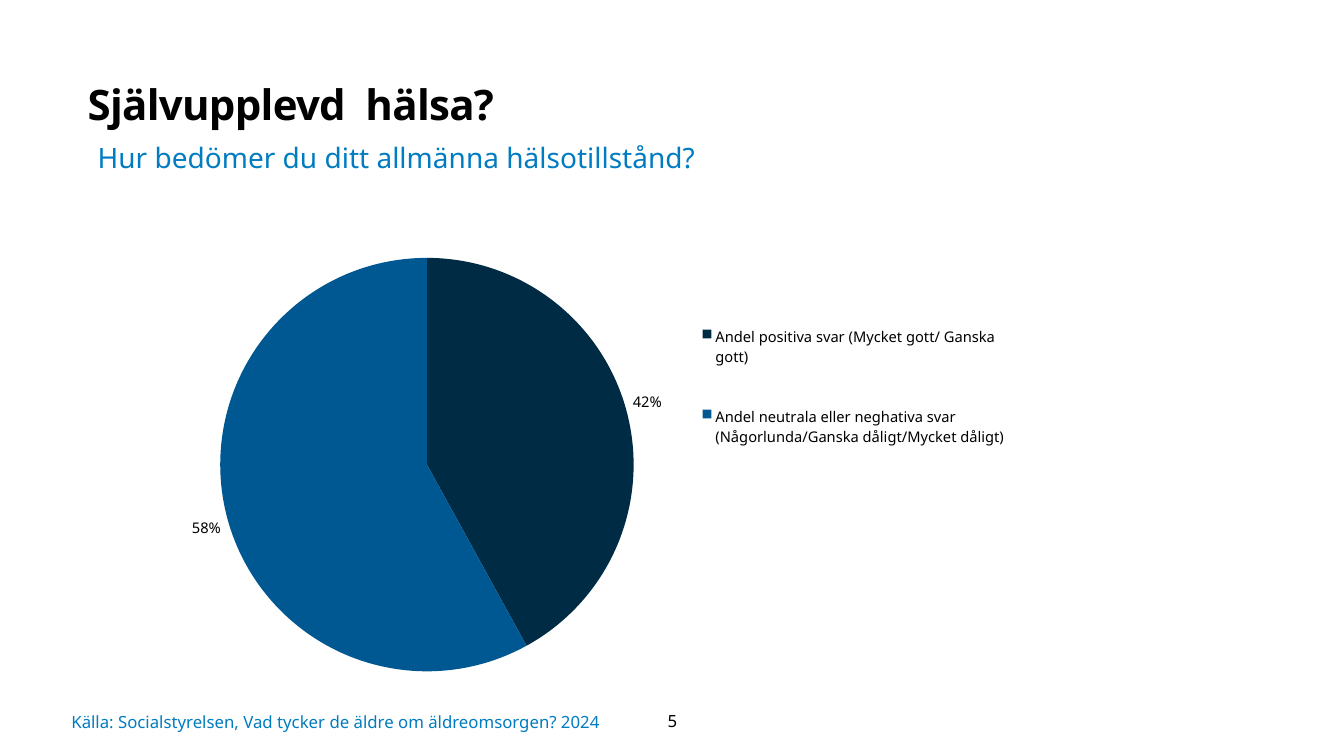
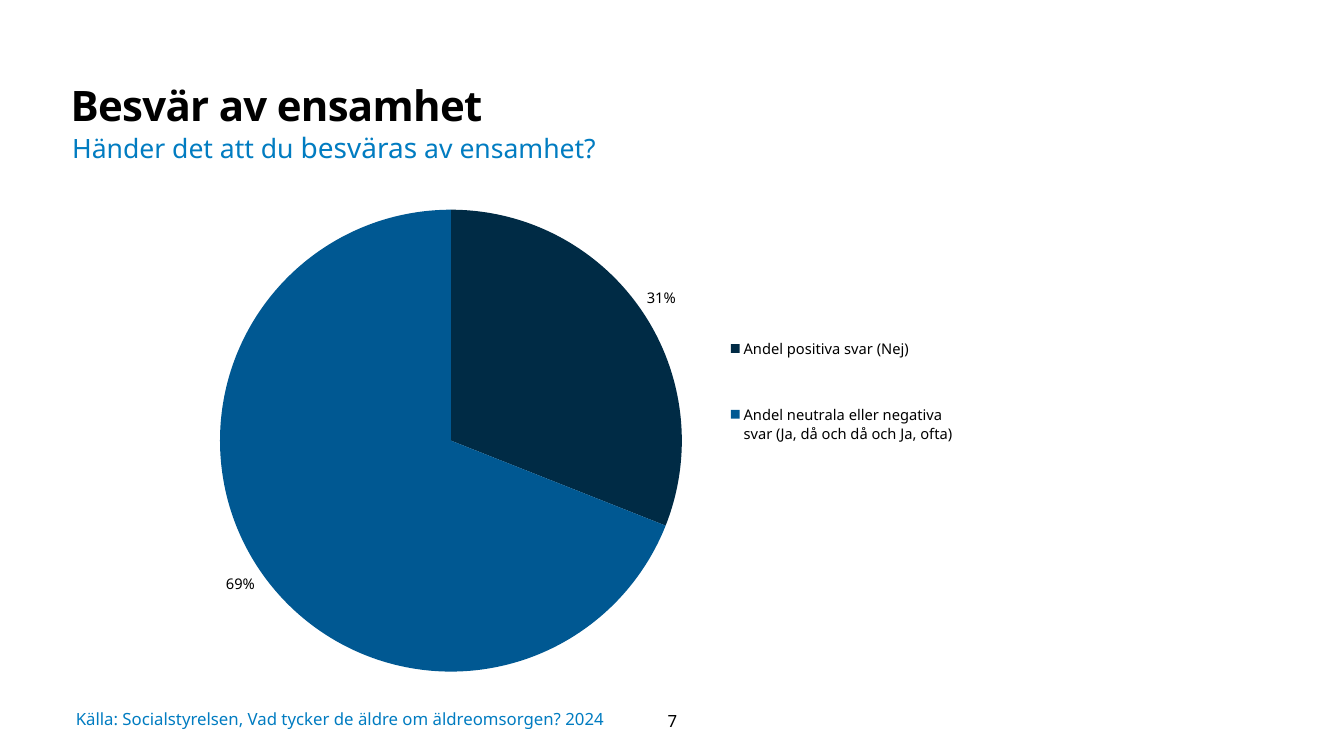
"""Build two survey slides, each with a pie chart of answers from older people."""
from lxml import etree
from pptx import Presentation
from pptx.chart.data import CategoryChartData
from pptx.dml.color import RGBColor
from pptx.enum.chart import XL_CHART_TYPE, XL_LABEL_POSITION, XL_LEGEND_POSITION
from pptx.enum.text import MSO_ANCHOR, PP_ALIGN
from pptx.oxml.ns import qn
from pptx.util import Cm, Pt

PIE = XL_CHART_TYPE.PIE
OUTSIDE = XL_LABEL_POSITION.OUTSIDE_END
RIGHT = XL_LEGEND_POSITION.RIGHT
TOP, MIDDLE = MSO_ANCHOR.TOP, MSO_ANCHOR.MIDDLE
LEFT, CENTER = PP_ALIGN.LEFT, PP_ALIGN.CENTER

FONT = "Noto Sans"
BLACK, ACCENT = "000000", "017CC1"
SLICE_COLORS = ["002B45", "005892"]
INSETS = (0.25, 0.13, 0.25, 0.13)
TITLE_INSETS = (0, 0, 0.25, 0.13)
NO_INSETS = (0, 0, 0, 0)
SOURCE = "Källa: Socialstyrelsen, Vad tycker de äldre om äldreomsorgen? 2024"

SLIDES = [
    {
        "title": ("Självupplevd  hälsa?", (2.21, 1.85, 24.97, 1.55)),
        "question": (["Hur bedömer du ditt allmänna hälsotillstånd?"], 20, (2.21, 3.4, 20.02, 1.12)),
        "answers": {
            "Andel positiva svar (Mycket gott/ Ganska gott)": 42,
            "Andel neutrala eller neghativa svar (Någorlunda/Ganska dåligt/Mycket dåligt)": 58,
        },
        "chart": (4.22, 5.38, 22.17, 12.29),
        "plot": (0.06, 0.09, 0.47, 0.85),
        "legend": (0.6, 0.15, 0.36, 0.41),
        "source": (1.8, 17.65, 13.84, 1.07),
        "number": "5",
    },
    {
        "title": ("Besvär av ensamhet", (1.78, 1.88, 27, 1.24)),
        "question": (["Händer det att du ", "besväras", " av ensamhet?"], 19, (1.57, 3.15, 25.78, 1.12)),
        "answers": {
            "Andel positiva svar (Nej)": 31,
            "Andel neutrala eller negativa svar (Ja, då och då och Ja, ofta)": 69,
        },
        "chart": (3.23, 4.5, 21.41, 13.08),
        "plot": (0.09, 0.06, 0.58, 0.89),
        "legend": (0.7, 0.22, 0.28, 0.38),
        "source": (1.91, 17.75, 15.01, 0.74),
        "number": "7",
    },
]


def add_text(slide, box, runs, size, color, insets=INSETS, anchor=TOP, align=LEFT):
    """Add a one-paragraph text box and return the paragraph."""
    frame = slide.shapes.add_textbox(*map(Cm, box)).text_frame
    frame.word_wrap = True
    frame.vertical_anchor = anchor
    frame.margin_left, frame.margin_top, frame.margin_right, frame.margin_bottom = map(Cm, insets)
    paragraph = frame.paragraphs[0]
    paragraph.alignment = align
    for text in runs:
        paragraph.add_run().text = text
    paragraph.font.name = FONT
    paragraph.font.size = Pt(size)
    paragraph.font.color.rgb = RGBColor.from_string(color)
    return paragraph


def set_layout(parent, index, fractions, inner=False):
    """Place a chart part by fractions of the chart area."""
    for old in parent.findall(qn("c:layout")):
        parent.remove(old)
    layout = etree.Element(qn("c:layout"))
    manual = etree.SubElement(layout, qn("c:manualLayout"))
    settings = [("layoutTarget", "inner")] if inner else []
    settings += [("xMode", "edge"), ("yMode", "edge"), *zip("xywh", fractions)]
    for tag, value in settings:
        etree.SubElement(manual, qn(f"c:{tag}")).set("val", str(value))
    parent.insert(index, layout)


deck = Presentation()
deck.slide_width, deck.slide_height = Cm(33.87), Cm(19.05)

for content in SLIDES:
    slide = deck.slides.add_slide(deck.slide_layouts[6])

    title_text, title_box = content["title"]
    title = add_text(slide, title_box, [title_text], 30, BLACK, TITLE_INSETS)
    title.font.bold = True
    title.line_spacing = 1.1
    title.runs[0].font._element.set("spc", "-50")

    question_runs, question_size, question_box = content["question"]
    question = add_text(slide, question_box, question_runs, question_size, ACCENT)
    for emphasis in question.runs[1:2]:
        emphasis.font.size = Pt(20)

    answers = CategoryChartData()
    answers.categories = list(content["answers"])
    answers.add_series("Series 1", list(content["answers"].values()))
    chart = slide.shapes.add_chart(PIE, *map(Cm, content["chart"]), answers).chart
    chart.has_title = False
    chart.font.name = FONT
    chart.font.size = Pt(10)
    chart.font.color.rgb = RGBColor.from_string(BLACK)

    chart.has_legend = True
    legend = chart.legend
    legend.position = RIGHT
    legend.include_in_layout = False
    legend.font.name = FONT
    legend.font.size = Pt(10.5)
    set_layout(legend._element, 1, content["legend"])
    set_layout(chart._chartSpace.chart.plotArea, 0, content["plot"], inner=True)

    pie = chart.plots[0]
    pie.vary_by_categories = True
    for index, color in enumerate(SLICE_COLORS):
        slice_format = pie.series[0].points[index].format
        slice_format.fill.solid()
        slice_format.fill.fore_color.rgb = RGBColor.from_string(color)
        slice_format.line.fill.background()

    labels = pie.series[0].data_labels
    labels.show_value = False
    labels.show_percentage = True
    labels.number_format = "0%"
    labels.number_format_is_linked = False
    labels.position = OUTSIDE
    labels.font.name = FONT
    labels.font.size = Pt(10.5)

    add_text(slide, content["source"], [SOURCE], 12, ACCENT, NO_INSETS, MIDDLE)
    add_text(slide, (15.65, 17.65, 2.59, 1.02), [content["number"]], 12, BLACK, anchor=MIDDLE, align=CENTER)

deck.save("out.pptx")
